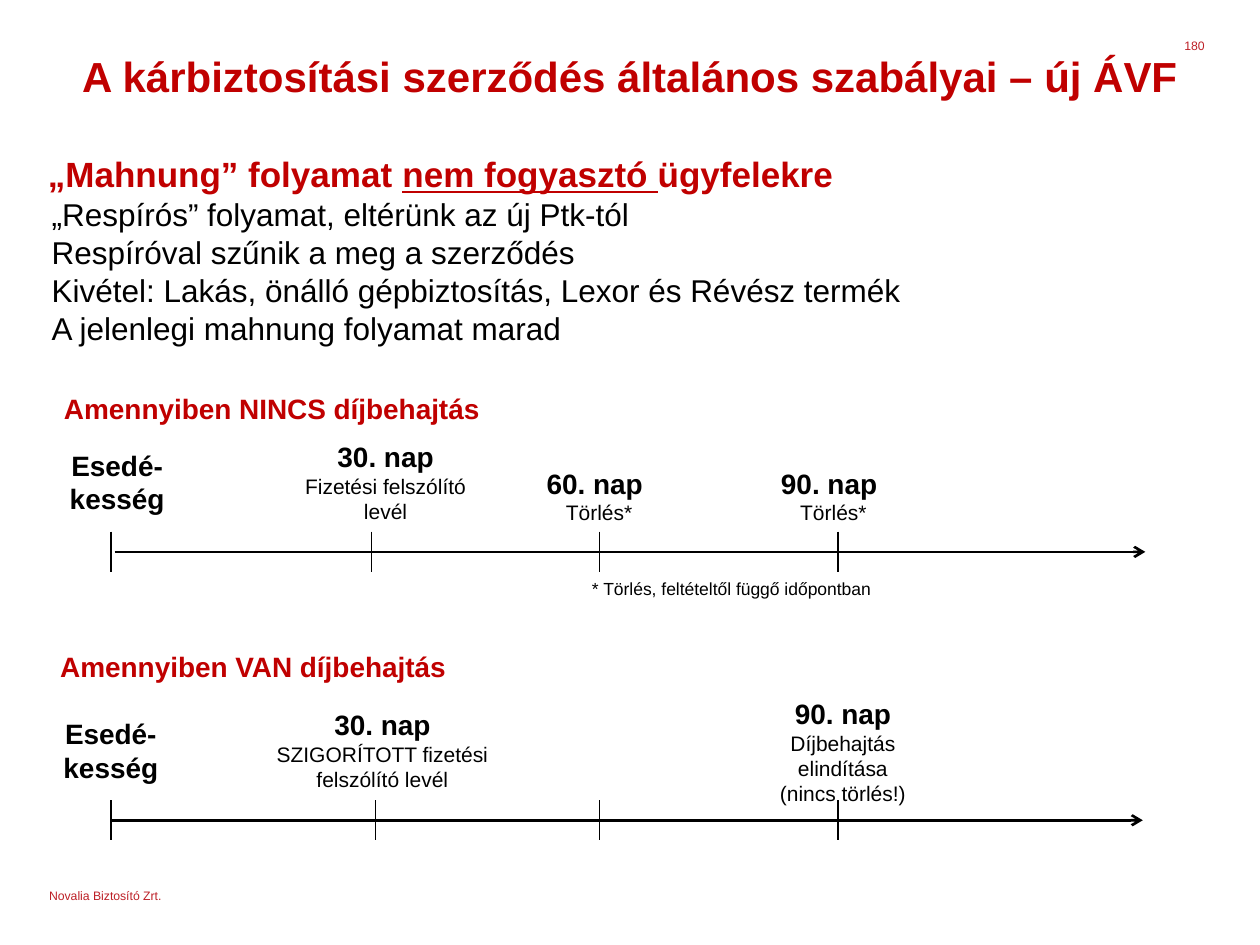
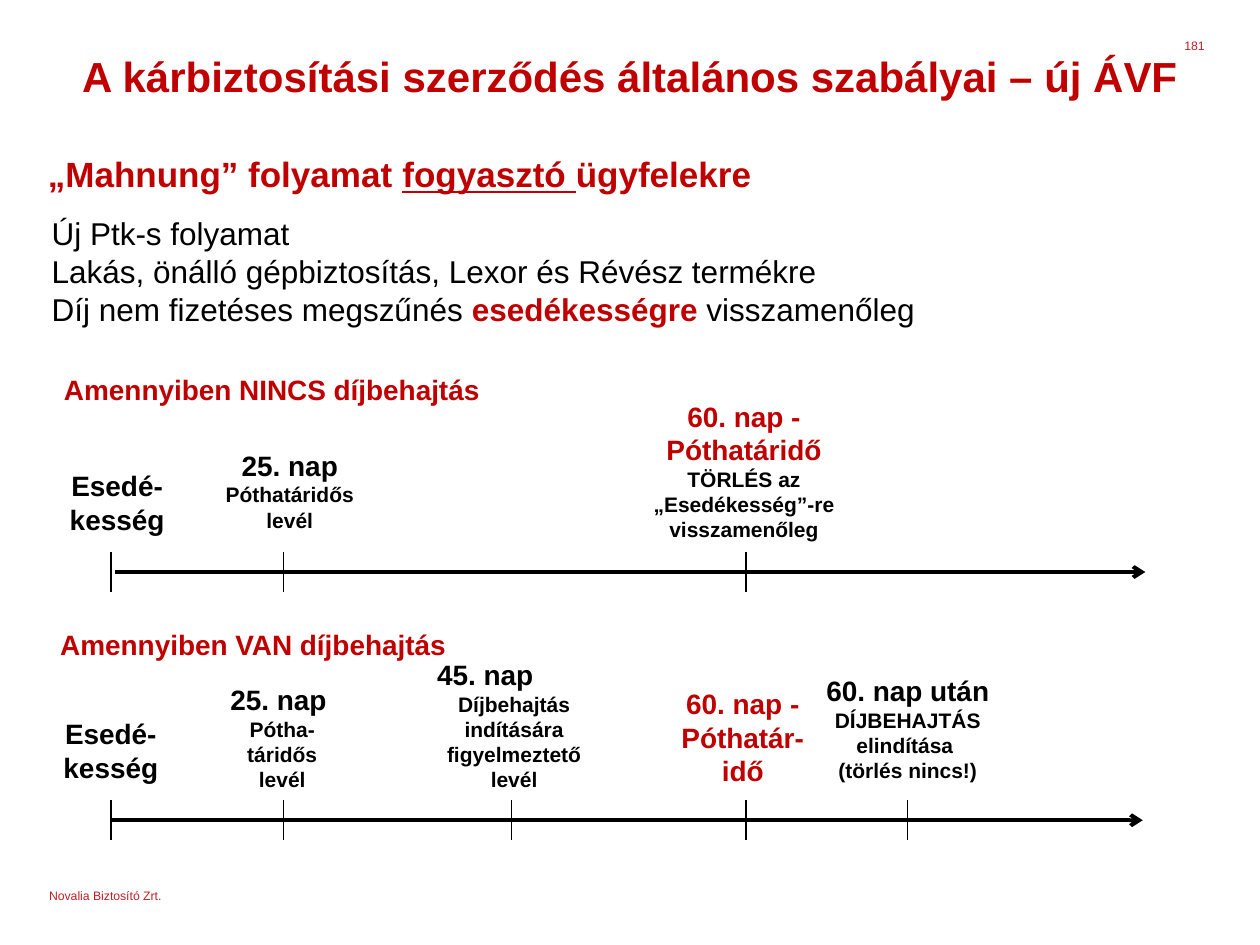
from lxml import etree
from pptx import Presentation
from pptx.dml.color import RGBColor
from pptx.enum.shapes import MSO_CONNECTOR
from pptx.enum.text import MSO_ANCHOR, PP_ALIGN
from pptx.oxml.ns import qn
from pptx.util import Inches, Pt

STRAIGHT = MSO_CONNECTOR.STRAIGHT
LEFT, CENTER, RIGHT = PP_ALIGN.LEFT, PP_ALIGN.CENTER, PP_ALIGN.RIGHT
MIDDLE, TOP = MSO_ANCHOR.MIDDLE, MSO_ANCHOR.TOP
COLORS = {"red": "C00000", "footer": "BD2027", "black": "000000"}
FONT = "Arial"
TICK_HEIGHT = 0.32

TITLE = "A kárbiztosítási szerződés általános szabályai – új ÁVF"
FOOTER = "Novalia Biztosító Zrt."
NO_COLLECTION = "Amennyiben NINCS díjbehajtás"
WITH_COLLECTION = "Amennyiben VAN díjbehajtás"
DUE = "Esedé-kesség"


def add_text(slide, box, paragraphs, inset=True, anchor=TOP, spacing=None):
    """Each paragraph is (runs, size, color, bold, align); a run is a string
    or a (string, changed font settings) pair."""
    frame = slide.shapes.add_textbox(*map(Inches, box)).text_frame
    frame.word_wrap = True
    frame.vertical_anchor = anchor
    if not inset:
        frame.margin_left = frame.margin_right = 0
        frame.margin_top = frame.margin_bottom = 0
    for i, (runs, size, color, bold, align) in enumerate(paragraphs):
        paragraph = frame.add_paragraph() if i else frame.paragraphs[0]
        paragraph.alignment = align
        if spacing:
            paragraph.line_spacing = spacing
        paragraph.font.name = FONT
        paragraph.font.size = Pt(size)
        paragraph.font.bold = bold
        paragraph.font.color.rgb = RGBColor.from_string(COLORS[color])
        for part in [runs] if isinstance(runs, str) else runs:
            text, changes = (part, {}) if isinstance(part, str) else part
            run = paragraph.add_run()
            run.text = text
            if "underline" in changes:
                run.font.underline = True
            if "accent" in changes:
                run.font.bold = True
                run.font.color.rgb = RGBColor.from_string(COLORS[changes["accent"]])


def add_line(slide, start, end, width, arrow=False):
    line = slide.shapes.add_connector(STRAIGHT, *map(Inches, (*start, *end)))
    line.line.width = Pt(width)
    line.line.color.rgb = RGBColor.from_string(COLORS["black"])
    if arrow:
        etree.SubElement(line.line._get_or_add_ln(), qn("a:tailEnd"), type="arrow")
    etree.SubElement(line._element.spPr, qn("a:effectLst"))


# Timeline: heading, heading position, axis (start, end, y), ticks, labels.
# Label: box, day, day color, day alignment, details.
pages = [
    {
        "number": "180",
        "audience": "nem fogyasztó ",
        "body_top": 1.55,
        "body": [
            "„Respírós” folyamat, eltérünk az új Ptk-tól",
            "Respíróval szűnik a meg a szerződés",
            "Kivétel: Lakás, önálló gépbiztosítás, Lexor és Révész termék",
            "A jelenlegi mahnung folyamat marad",
        ],
        "axis_width": 1.5,
        "bold_details": False,
        "timelines": [
            (NO_COLLECTION, (0.41, 3.06), (0.91, 9.09, 4.38), [0.88, 2.95, 4.76, 6.65], [
                ((0.38, 3.51, 1.1, 0.64), DUE, "black", CENTER, []),
                ((2.3, 3.44, 1.52, 0.77), "30. nap", "black", CENTER,
                 ["Fizetési felszólító levél"]),
                ((4.24, 3.65, 1.03, 0.57), "60. nap", "black", LEFT, ["Törlés*"]),
                ((6.1, 3.65, 1.03, 0.57), "90. nap", "black", LEFT, ["Törlés*"]),
            ]),
            (WITH_COLLECTION, (0.38, 5.11), (0.88, 9.07, 6.51), [0.88, 2.98, 4.76, 6.65], [
                ((0.33, 5.64, 1.1, 0.64), DUE, "black", CENTER, []),
                ((2.09, 5.57, 1.89, 0.77), "30. nap", "black", CENTER,
                 ["SZIGORÍTOTT fizetési felszólító levél"]),
                ((6.02, 5.48, 1.34, 0.98), "90. nap", "black", CENTER,
                 ["Díjbehajtás elindítása", "(nincs törlés!)"]),
            ]),
        ],
        "footnote": "* Törlés, feltételtől függő időpontban",
    },
    {
        "number": "181",
        "audience": "fogyasztó ",
        "body_top": 1.7,
        "body": [
            "Új Ptk-s folyamat",
            "Lakás, önálló gépbiztosítás, Lexor és Révész termékre",
            ["Díj nem fizetéses megszűnés ", ("esedékességre", {"accent": "red"}),
             " visszamenőleg"],
        ],
        "axis_width": 2.25,
        "bold_details": True,
        "timelines": [
            (NO_COLLECTION, (0.41, 2.91), (0.91, 9.09, 4.54), [0.88, 2.25, 5.92], [
                ((0.38, 3.67, 1.1, 0.64), DUE, "black", CENTER, []),
                ((1.61, 3.51, 1.38, 0.77), "25. nap", "black", CENTER,
                 ["Póthatáridős levél"]),
                ((5, 3.12, 1.81, 1.25), "60. nap - Póthatáridő", "red", CENTER,
                 ["TÖRLÉS az „Esedékesség”-re visszamenőleg"]),
            ]),
            (WITH_COLLECTION, (0.38, 4.93), (0.88, 9.07, 6.51),
             [0.88, 2.25, 4.06, 5.92, 7.2], [
                ((0.33, 5.64, 1.1, 0.64), DUE, "black", CENTER, []),
                ((1.73, 5.37, 1.02, 0.98), "25. nap", "black", LEFT,
                 ["Pótha-táridős levél"]),
                ((3.37, 5.17, 1.42, 1.18), "45. nap", "black", LEFT,
                 ["Díjbehajtás indítására figyelmeztető levél"]),
                ((5.3, 5.4, 1.19, 1.11), "60. nap - Póthatár-idő", "red", CENTER, []),
                ((6.42, 5.3, 1.57, 0.98), "60. nap után", "black", CENTER,
                 ["DÍJBEHAJTÁS elindítása ", "(törlés nincs!)"]),
            ]),
        ],
        "footnote": None,
    },
]

prs = Presentation()
prs.slide_width, prs.slide_height = Inches(10), Inches(7.5)

for page in pages:
    slide = prs.slides.add_slide(prs.slide_layouts[6])

    add_text(slide, (9.34, 0.3, 0.22, 0.2),
             [(page["number"], 7, "footer", False, RIGHT)], inset=False)
    add_text(slide, (0.5, 0.3, 9, 0.69), [(TITLE, 24, "red", True, CENTER)],
             anchor=MIDDLE, spacing=Pt(22))
    subtitle = ["„Mahnung” folyamat ", (page["audience"], {"underline": True}),
                "ügyfelekre"]
    add_text(slide, (0.38, 1.24, 9.17, 0.26), [(subtitle, 20, "red", True, LEFT)],
             inset=False, spacing=Pt(22))
    add_text(slide, (0.41, page["body_top"], 9.17, 1.1),
             [(line, 18, "black", False, LEFT) for line in page["body"]], inset=False)
    add_text(slide, (0.39, 7.06, 1.23, 0.13), [(FOOTER, 7, "footer", False, LEFT)],
             inset=False, spacing=0.96)

    for heading, heading_at, (start, end, y), ticks, labels in page["timelines"]:
        add_text(slide, (*heading_at, 3.67, 0.37), [(heading, 16, "red", True, LEFT)])
        add_line(slide, (start, y), (end, y), page["axis_width"], arrow=True)
        for x in ticks:
            add_line(slide, (x, y - TICK_HEIGHT / 2), (x, y + TICK_HEIGHT / 2), 0.75)
        for box, day, color, align, details in labels:
            add_text(slide, box, [(day, 16, color, True, align)] + [
                (detail, 12, "black", page["bold_details"], CENTER)
                for detail in details])

    if page["footnote"]:
        add_text(slide, (4.6, 4.54, 3, 0.27),
                 [(page["footnote"], 10, "black", False, LEFT)])

prs.save("out.pptx")
